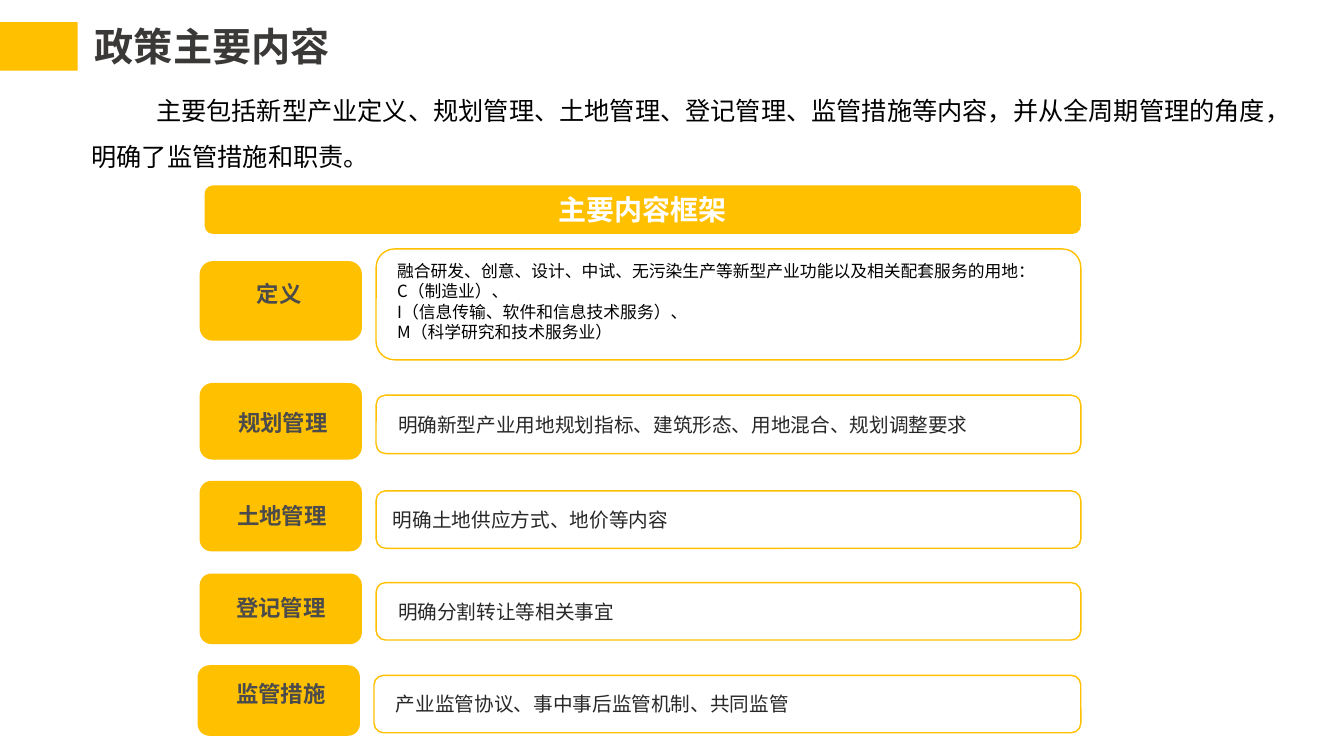
from lxml import etree
from pptx import Presentation
from pptx.dml.color import RGBColor
from pptx.enum.shapes import MSO_SHAPE
from pptx.enum.text import MSO_ANCHOR, MSO_AUTO_SIZE, PP_ALIGN
from pptx.oxml.ns import qn
from pptx.util import Inches, Pt

RECT, ROUND = MSO_SHAPE.RECTANGLE, MSO_SHAPE.ROUNDED_RECTANGLE
LEFT, CENTER = PP_ALIGN.LEFT, PP_ALIGN.CENTER
TOP, MIDDLE = MSO_ANCHOR.TOP, MSO_ANCHOR.MIDDLE
GROW = MSO_AUTO_SIZE.SHAPE_TO_FIT_TEXT

FONT = "Noto Sans CJK SC"
COLORS = {
    "gold": "FFC000", "white": "FFFFFF", "black": "000000",
    "title": "3B3838", "label": "4B4B4B", "body": "282828",
}
STYLES = {
    "title": {"size": Pt(28), "bold": True},
    "black": {"size": Pt(18), "bold": False},
    "white": {"size": Pt(20), "bold": True},
    "label": {"size": Pt(16), "bold": True},
    "body": {"size": Pt(14), "bold": False},
}
SMALL = {"size": Pt(12)}

# Label, label box, label text corner, body box, body text inset, body text
ROWS = [
    ("规划管理", (1.98, 3.8, 1.61, 0.76), (2.26, 4.01), (3.73, 3.92, 6.99, 0.58),
     0.19, "明确新型产业用地规划指标、建筑形态、用地混合、规划调整要求"),
    ("土地管理", (1.98, 4.77, 1.61, 0.7), (2.25, 4.93), (3.73, 4.87, 6.99, 0.57),
     0.14, "明确土地供应方式、地价等内容"),
    ("登记管理", (1.98, 5.69, 1.61, 0.7), (2.24, 5.85), (3.73, 5.78, 6.99, 0.57),
     0.19, "明确分割转让等相关事宜"),
    ("监管措施", (1.96, 6.6, 1.61, 0.7), (2.24, 6.7), (3.71, 6.7, 7.01, 0.57),
     0.19, "产业监管协议、事中事后监管机制、共同监管"),
]
TERMS = [
    "融合研发、创意、设计、中试、无污染生产等新型产业功能以及相关配套服务的用地：",
    "C（制造业）、",
    "I（信息传输、软件和信息技术服务）、",
    "M（科学研究和技术服务业）",
]


def color(key):
    return RGBColor.from_string(COLORS[key])


def write(shape, lines, key, align=LEFT, anchor=TOP, wrap=True, inset=0.1, **extra):
    frame = shape.text_frame
    look = {"word_wrap": wrap, "vertical_anchor": anchor, "margin_left": Inches(inset)}
    for name, value in look.items():
        setattr(frame, name, value)
    for i, line in enumerate(lines):
        para = frame.add_paragraph() if i else frame.paragraphs[0]
        para.alignment = align
        run = para.add_run()
        run.text = line
        for name, value in {"name": FONT, **STYLES[key], **extra}.items():
            setattr(run.font, name, value)
        run.font.color.rgb = color(key)
        etree.SubElement(run.font._element, qn("a:ea"), typeface=FONT)
    return frame


def add_box(slide, box, kind=ROUND, fill="gold", line=None):
    shape = slide.shapes.add_shape(kind, *map(Inches, box))
    shape.shadow.inherit = False
    if fill:
        shape.fill.solid()
        shape.fill.fore_color.rgb = color(fill)
    else:
        shape.fill.background()
    if line:
        shape.line.color.rgb = color(line)
        shape.line.width = Pt(1)
    else:
        shape.line.fill.background()
    return shape


def add_text(slide, box, lines, key, **look):
    shape = slide.shapes.add_textbox(*map(Inches, box))
    frame = write(shape, lines, key, **look)
    frame.auto_size = GROW
    return frame


def add_head(slide, x, y):
    add_box(slide, (x, y, 0.77, 0.48), RECT)
    add_text(slide, (x + 0.83, y - 0.05, 6.38, 0.58), ["政策主要内容"], "title", inset=0.11)


def add_intro(slide, box):
    text = ("主要包括新型产业定义、规划管理、土地管理、登记管理、监管措施等内容，"
            "并从全周期管理的角度，明确了监管措施和职责。")
    para = add_text(slide, box, [text], "black").paragraphs[0]
    para.line_spacing = 1.5
    para._p.get_or_add_pPr().set("indent", str(Inches(0.64)))


def add_label(slide, box, spot, width, text):
    add_box(slide, box)
    add_text(slide, (*spot, width, 0.37), [text], "label", align=CENTER, wrap=False)


def add_terms(slide, box):
    x, y, w, h = box
    add_label(slide, (x - 1.75, y + 0.12, 1.61, 0.79), (x - 1.28, y + 0.26), 0.64, "定义")
    add_box(slide, box, fill=None, line="gold")
    add_text(slide, (x + 0.11, y + 0.07, w - 0.1, h - 0.19), TERMS, "black", **SMALL)


def add_row(slide, label, tag, spot, box, inset, text):
    add_label(slide, tag, spot, 1.09, label)
    body = add_box(slide, box, fill="white", line="gold")
    write(body, [text], "body", anchor=MIDDLE, inset=inset)


def main():
    deck = Presentation()
    deck.slide_width, deck.slide_height = Inches(13.33), Inches(7.5)
    slide = deck.slides.add_slide(deck.slide_layouts[6])

    # Title and introduction
    add_head(slide, 0, 0.22)
    add_intro(slide, (0.81, 0.75, 12.29, 1.01))

    # Framework banner
    banner = add_box(slide, (2.03, 1.84, 8.69, 0.48))
    write(banner, ["主要内容框架"], "white", align=CENTER, anchor=MIDDLE)

    # Definition and the rows under it
    add_terms(slide, (3.73, 2.47, 6.99, 1.1))
    for row in ROWS:
        add_row(slide, *row)

    deck.save("out.pptx")


if __name__ == "__main__":
    main()
